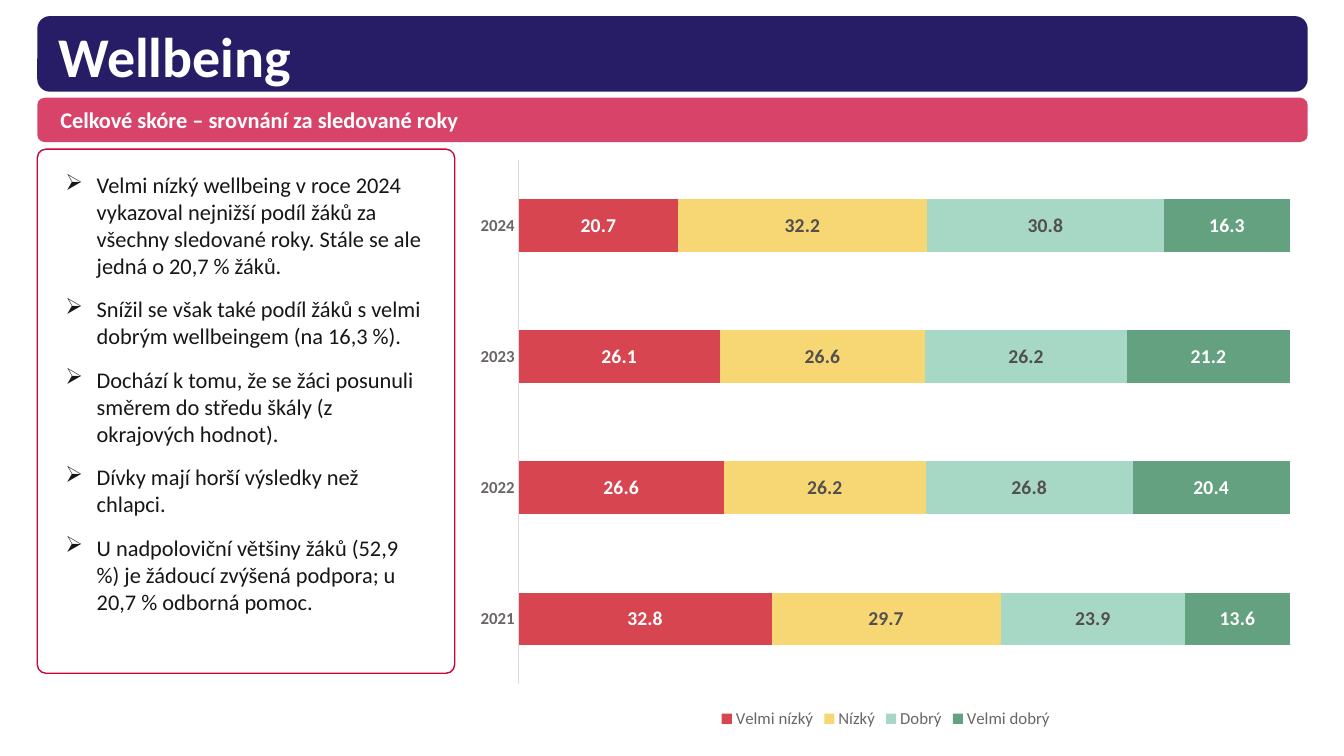
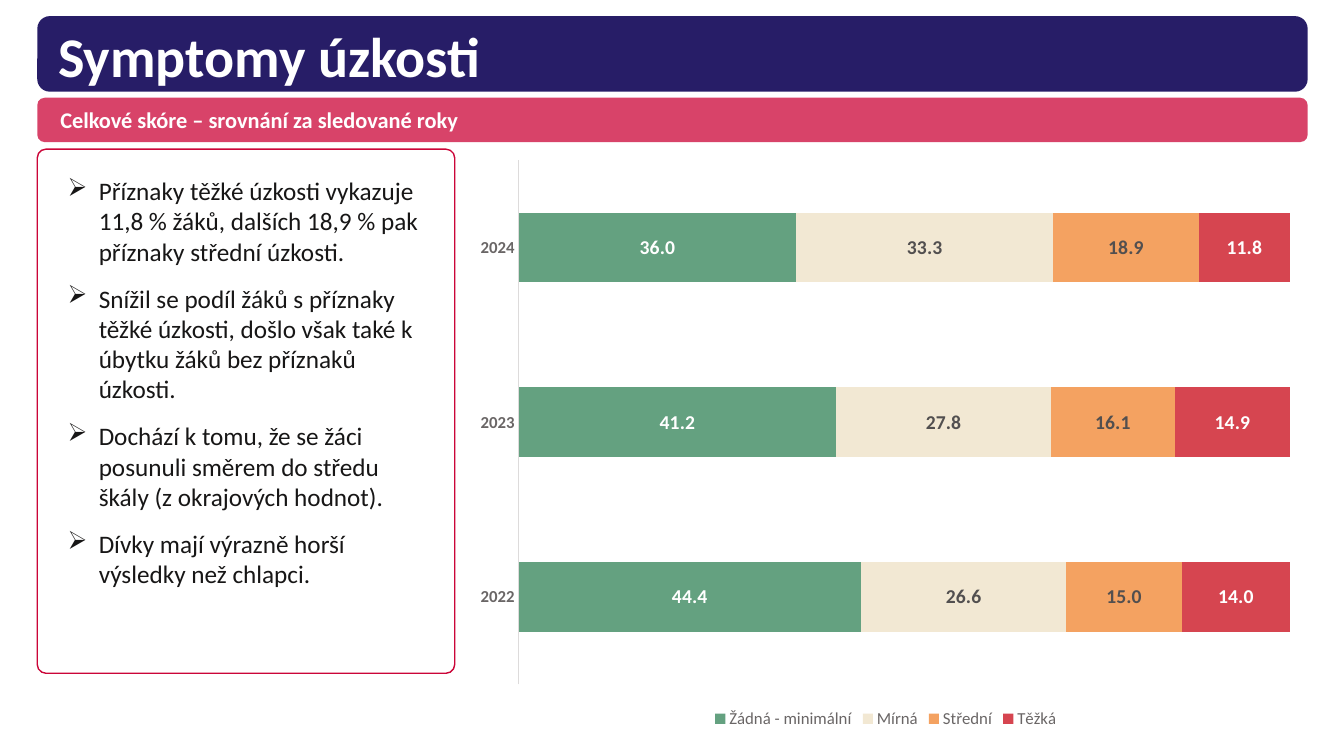
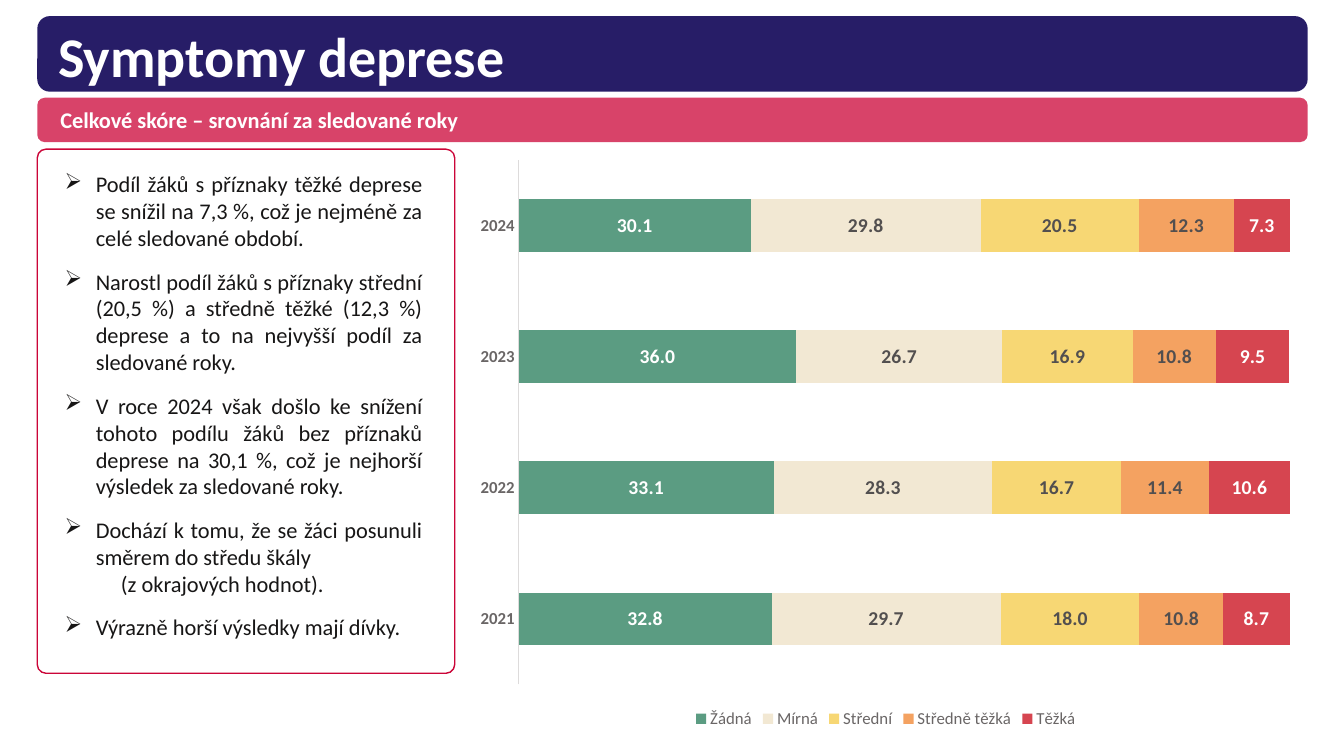
from dataclasses import dataclass
from typing import Optional

from lxml.etree import SubElement
from pptx import Presentation
from pptx.chart.data import CategoryChartData
from pptx.dml.color import RGBColor
from pptx.enum.chart import XL_CHART_TYPE, XL_LABEL_POSITION, XL_LEGEND_POSITION, XL_TICK_MARK
from pptx.enum.shapes import MSO_SHAPE
from pptx.enum.text import MSO_ANCHOR, PP_ALIGN
from pptx.oxml import parse_xml
from pptx.oxml.ns import nsdecls, qn
from pptx.util import Inches, Pt

FONT = "Calibri"
WHITE = RGBColor(0xFF, 0xFF, 0xFF)
NAVY = RGBColor(0x27, 0x1D, 0x67)
CRIMSON = RGBColor(0xCB, 0x05, 0x38)
INK = RGBColor(0x17, 0x16, 0x16)
AXIS_GREY = RGBColor(0x6A, 0x66, 0x66)
LABEL_GREY = RGBColor(0x52, 0x4F, 0x4F)
AXIS_LINE = RGBColor(0xDD, 0xDB, 0xDB)
RED = RGBColor(0xD6, 0x45, 0x50)
YELLOW = RGBColor(0xF7, 0xD7, 0x74)
MINT = RGBColor(0xA7, 0xD7, 0xC5)
GREEN = RGBColor(0x64, 0xA1, 0x80)
DEEP_GREEN = RGBColor(0x5B, 0x9C, 0x82)
CREAM = RGBColor(0xF2, 0xE8, 0xD3)
ORANGE = RGBColor(0xF4, 0xA2, 0x61)
DARK_LEVELS = (RED, GREEN, DEEP_GREEN)

SUBTITLE = "Celkové skóre – srovnání za sledované roky"
BULLET_INDENT = 0.31
CONTINUATION_INDENT = 0.56


@dataclass(frozen=True)
class Box:
    left: float
    top: float
    width: float
    height: float

    def emu(self) -> tuple:
        return tuple(Inches(v) for v in (self.left, self.top, self.width, self.height))


@dataclass(frozen=True)
class Panel:
    box: Box
    fill: RGBColor
    opacity: int = 100
    border: Optional[RGBColor] = None
    corner: Optional[float] = None


@dataclass(frozen=True)
class Level:
    name: str
    color: RGBColor
    shares: tuple


@dataclass(frozen=True)
class Topic:
    title: str
    findings: tuple
    findings_box: Box
    size: int
    align: PP_ALIGN
    years: tuple
    levels: tuple


PANELS = (
    Panel(Box(0.37, 0.97, 12.6, 0.44), CRIMSON, opacity=75),
    Panel(Box(0.37, 0.16, 12.6, 0.75), NAVY),
    Panel(Box(0.37, 1.48, 4.14, 5.2), WHITE, border=CRIMSON, corner=0.021),
)
TITLE_BOX = Box(0.48, 0.24, 11.5, 0.54)
SUBTITLE_BOX = Box(0.5, 1.05, 10, 0.3)
CHART_BOX = Box(4.6, 1.49, 8.37, 5.78)
PLOT_AREA = {"x": 0.065, "y": 0.017, "w": 0.914, "h": 0.9}

TOPICS = (
    Topic(
        "Wellbeing",
        (
            "Velmi nízký wellbeing v roce 2024 vykazoval nejnižší podíl žáků za všechny "
            "sledované roky. Stále se ale jedná o 20,7 % žáků.",
            "Snížil se však také podíl žáků s velmi dobrým wellbeingem (na 16,3 %).",
            "Dochází k tomu, že se žáci posunuli směrem do středu škály (z okrajových hodnot).",
            "Dívky mají horší výsledky než chlapci.",
            "U nadpoloviční většiny žáků (52,9 %) je žádoucí zvýšená podpora; "
            "u 20,7 % odborná pomoc.",
        ),
        Box(0.45, 1.5, 3.97, 5.07), 16, PP_ALIGN.LEFT,
        ("2021", "2022", "2023", "2024"),
        (
            Level("Velmi nízký", RED, (32.8, 26.6, 26.1, 20.7)),
            Level("Nízký", YELLOW, (29.7, 26.2, 26.6, 32.2)),
            Level("Dobrý", MINT, (23.9, 26.8, 26.2, 30.8)),
            Level("Velmi dobrý", GREEN, (13.6, 20.4, 21.2, 16.3)),
        ),
    ),
    Topic(
        "Symptomy úzkosti",
        (
            "Příznaky těžké úzkosti vykazuje 11,8 % žáků, dalších 18,9 % pak příznaky "
            "střední úzkosti.",
            "Snížil se podíl žáků s příznaky těžké úzkosti, došlo však také k úbytku žáků "
            "bez příznaků úzkosti.",
            "Dochází k tomu, že se žáci posunuli směrem do středu škály (z okrajových hodnot).",
            "Dívky mají výrazně horší výsledky než chlapci.",
        ),
        Box(0.47, 1.54, 3.97, 5.07), 18, PP_ALIGN.LEFT,
        ("2022", "2023", "2024"),
        (
            Level("Žádná - minimální", GREEN, (44.4, 41.2, 36.0)),
            Level("Mírná", CREAM, (26.6, 27.8, 33.3)),
            Level("Střední", ORANGE, (15.0, 16.1, 18.9)),
            Level("Těžká", RED, (14.0, 14.9, 11.8)),
        ),
    ),
    Topic(
        "Symptomy deprese",
        (
            "Podíl žáků s příznaky těžké deprese se snížil na 7,3 %, což je nejméně za celé "
            "sledované období.",
            "Narostl podíl žáků s příznaky střední (20,5 %) a středně těžké (12,3 %) deprese "
            "a to na nejvyšší podíl za sledované roky.",
            "V roce 2024 však došlo ke snížení tohoto podílu žáků bez příznaků deprese na "
            "30,1 %, což je nejhorší výsledek za sledované roky.",
            "Dochází k tomu, že se žáci posunuli směrem do středu škály\n(z okrajových hodnot).",
            "Výrazně horší výsledky mají dívky.",
        ),
        Box(0.44, 1.49, 3.95, 5.07), 16, PP_ALIGN.JUSTIFY,
        ("2021", "2022", "2023", "2024"),
        (
            Level("Žádná", DEEP_GREEN, (32.8, 33.1, 36.0, 30.1)),
            Level("Mírná", CREAM, (29.7, 28.3, 26.7, 29.8)),
            Level("Střední", YELLOW, (18.0, 16.7, 16.9, 20.5)),
            Level("Středně těžká", ORANGE, (10.8, 11.4, 10.8, 12.3)),
            Level("Těžká", RED, (8.7, 10.6, 9.5, 7.3)),
        ),
    ),
)


def set_font(font, size: float, color: RGBColor, bold: bool = False) -> None:
    font.name = FONT
    font.size = Pt(size)
    font.bold = bold
    font.color.rgb = color


def draw_panel(slide, panel: Panel) -> None:
    shape = slide.shapes.add_shape(MSO_SHAPE.ROUNDED_RECTANGLE, *panel.box.emu())
    shape.shadow.inherit = False
    shape.fill.solid()
    shape.fill.fore_color.rgb = panel.fill
    if panel.opacity < 100:
        rgb = shape.fill._xPr.find(".//" + qn("a:srgbClr"))
        SubElement(rgb, qn("a:alpha")).set("val", str(panel.opacity * 1000))
    if panel.border is None:
        shape.line.fill.background()
    else:
        shape.line.color.rgb = panel.border
        shape.line.width = Pt(1)
    if panel.corner is not None:
        shape.adjustments[0] = panel.corner


def indent(paragraph, left: float, bullet: str = "") -> None:
    properties = paragraph._p.get_or_add_pPr()
    properties.set("marL", str(Inches(left)))
    if bullet:
        properties.set("indent", str(-Inches(left)))
        SubElement(properties, qn("a:buChar")).set("char", bullet)


def write(slide, box: Box, entries: tuple, *, size: float, color: RGBColor,
          bold: bool = False, align: PP_ALIGN = PP_ALIGN.LEFT,
          anchor: MSO_ANCHOR = MSO_ANCHOR.TOP, line_spacing: Optional[float] = None,
          space_before: float = 0, bullet: str = "",
          margins: tuple = (0.1, 0.05, 0.1, 0.05)) -> None:
    frame = slide.shapes.add_textbox(*box.emu()).text_frame
    frame.word_wrap = True
    frame.vertical_anchor = anchor
    (frame.margin_left, frame.margin_top,
     frame.margin_right, frame.margin_bottom) = (Inches(m) for m in margins)
    lines = [(text, part == 0) for entry in entries
             for part, text in enumerate(entry.split("\n"))]
    for index, (text, starts_entry) in enumerate(lines):
        paragraph = frame.add_paragraph() if index else frame.paragraphs[0]
        if bullet and starts_entry:
            indent(paragraph, BULLET_INDENT, bullet)
        elif bullet:
            indent(paragraph, CONTINUATION_INDENT)
        paragraph.alignment = align
        if line_spacing:
            paragraph.line_spacing = line_spacing
        paragraph.space_before = Pt(space_before if index and starts_entry else 0)
        run = paragraph.add_run()
        run.text = text
        set_font(run.font, size, color, bold)


def place_plot(chart) -> None:
    plot_area = chart._chartSpace.chart.plotArea
    for automatic in plot_area.findall(qn("c:layout")):
        plot_area.remove(automatic)
    modes = "".join(f'<c:{side}Mode val="edge"/>' for side in "xy")
    sizes = "".join(f'<c:{key} val="{value}"/>' for key, value in PLOT_AREA.items())
    plot_area.insert(0, parse_xml(
        f'<c:layout {nsdecls("c")}><c:manualLayout><c:layoutTarget val="inner"/>'
        f"{modes}{sizes}</c:manualLayout></c:layout>"))


def draw_chart(slide, topic: Topic) -> None:
    data = CategoryChartData(number_format="0.0")
    data.categories = topic.years
    for level in topic.levels:
        data.add_series(level.name, level.shares)
    chart = slide.shapes.add_chart(XL_CHART_TYPE.BAR_STACKED, *CHART_BOX.emu(), data).chart
    set_font(chart.font, 10, INK)
    chart.has_title = False
    chart.has_legend = True
    chart.legend.position = XL_LEGEND_POSITION.BOTTOM
    chart.legend.include_in_layout = False
    set_font(chart.legend.font, 12, AXIS_GREY)

    year_axis = chart.category_axis
    year_axis.major_tick_mark = XL_TICK_MARK.NONE
    year_axis.has_major_gridlines = False
    year_axis.format.line.color.rgb = AXIS_LINE
    year_axis.format.line.width = Pt(0.75)
    set_font(year_axis.tick_labels.font, 12, AXIS_GREY, bold=True)

    share_axis = chart.value_axis
    share_axis.minimum_scale = 0
    share_axis.maximum_scale = 100
    share_axis.has_major_gridlines = False
    share_axis.visible = False

    plot = chart.plots[0]
    plot.gap_width = 150
    plot.overlap = 100
    plot.vary_by_categories = False
    for series, level in zip(plot.series, topic.levels):
        series.format.fill.solid()
        series.format.fill.fore_color.rgb = level.color
        labels = series.data_labels
        labels.show_value = True
        labels.position = XL_LABEL_POSITION.CENTER
        labels.number_format = "0.0"
        labels.number_format_is_linked = False
        set_font(labels.font, 14, WHITE if level.color in DARK_LEVELS else LABEL_GREY, bold=True)
    place_plot(chart)


def draw_topic(presentation, topic: Topic) -> None:
    slide = presentation.slides.add_slide(presentation.slide_layouts[6])
    for panel in PANELS:
        draw_panel(slide, panel)
    write(slide, TITLE_BOX, (topic.title,), size=40, color=WHITE, bold=True, line_spacing=0.9)
    write(slide, SUBTITLE_BOX, (SUBTITLE,), size=16, color=WHITE, bold=True,
          anchor=MSO_ANCHOR.MIDDLE, line_spacing=0.9)
    write(slide, topic.findings_box, topic.findings, size=topic.size, color=INK,
          align=topic.align, space_before=12, bullet="➢", margins=(0.2, 0.2, 0.2, 0.39))
    draw_chart(slide, topic)


def main() -> None:
    presentation = Presentation()
    presentation.slide_width = Inches(13.33)
    presentation.slide_height = Inches(7.5)
    for topic in TOPICS:
        draw_topic(presentation, topic)
    presentation.save("out.pptx")


if __name__ == "__main__":
    main()
